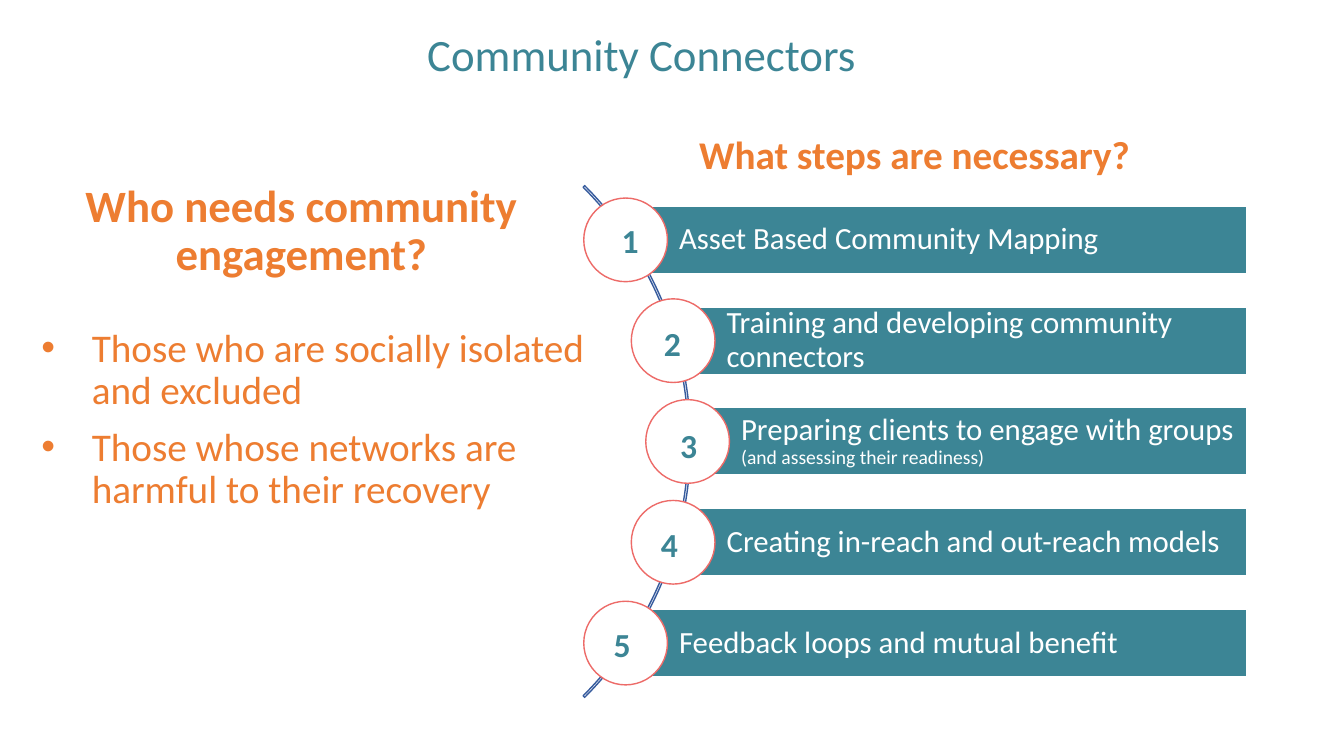
from dataclasses import dataclass
from math import sqrt

from lxml.etree import SubElement
from pptx import Presentation
from pptx.dml.color import RGBColor
from pptx.enum.shapes import MSO_SHAPE
from pptx.enum.text import MSO_ANCHOR, PP_ALIGN
from pptx.oxml.ns import qn
from pptx.util import Inches, Pt


@dataclass(frozen=True)
class Theme:
    """Colours, font and type sizes of the slide."""
    font: str = "Calibri"
    teal: str = "3C8595"
    orange: str = "ED7D31"
    coral: str = "ED6B68"
    blue: str = "365B9D"
    white: str = "FFFFFF"
    title: int = 32
    heading: int = 28
    number: int = 24
    step: int = 22
    note: int = 14


THEME = Theme()
ARC_X, ARC_Y, ARC_SIZE = 3.26, 4.38, 7.18
STEP_RADIUS, STEP_PITCH = 3.56, 1.0
BAR_RIGHT, BAR_HEIGHT, CIRCLE = 12.37, 0.67, 0.83
STEPS = [
    (["Asset Based Community Mapping"], 6.25, 2.13),
    (["Training and developing community connectors"], 6.67, 3.15),
    (["Preparing clients to engage with groups",
      "(and assessing their readiness)"], 6.83, 4.17),
    (["Creating in-reach and out-reach models"], 6.64, 5.15),
    (["Feedback loops and mutual benefit"], 6.17, 6.14),
]


def add_bullet(p, indent):
    """Give a paragraph a hanging bullet."""
    pPr = p._p.get_or_add_pPr()
    pPr.set("marL", str(Inches(indent)))
    pPr.set("indent", str(-Inches(indent)))
    SubElement(pPr, qn("a:buFont")).set("typeface", "Arial")
    SubElement(pPr, qn("a:buChar")).set("char", "•")


def write_text(sp, lines, *, sizes, color, bold=False, align=PP_ALIGN.CENTER,
               anchor=MSO_ANCHOR.TOP, insets=(0.1, 0.05, 0.1, 0.05),
               spacing=1.0, after=0, bullet=False):
    """Write one paragraph per line, each with its own size."""
    tf = sp.text_frame
    tf.word_wrap = True
    tf.vertical_anchor = anchor
    tf.margin_left, tf.margin_top, tf.margin_right, tf.margin_bottom = map(Inches, insets)
    for i, (line, size) in enumerate(zip(lines, sizes)):
        p = tf.add_paragraph() if i else tf.paragraphs[0]
        p.alignment = align
        p.line_spacing = spacing
        p.space_after = Pt(after)
        if bullet:
            add_bullet(p, 0.5)
        r = p.add_run()
        r.text = line
        r.font.name = THEME.font
        r.font.size = Pt(size)
        r.font.bold = bold
        r.font.color.rgb = RGBColor.from_string(color)


def add_text(s, box, lines, **style):
    """Add a text box."""
    write_text(s.shapes.add_textbox(*map(Inches, box)), lines, **style)


def add_shape(s, kind, box, fill=None, line=None):
    """Add a flat preset shape with an optional fill and outline."""
    sp = s.shapes.add_shape(kind, *map(Inches, box))
    sp.shadow.inherit = False
    if fill:
        sp.fill.solid()
        sp.fill.fore_color.rgb = RGBColor.from_string(fill)
    else:
        sp.fill.background()
    if line:
        sp.line.color.rgb = RGBColor.from_string(line)
        sp.line.width = Pt(1)
    else:
        sp.line.fill.background()
    return sp


def add_arc(s):
    """Add the thin arc that the steps follow."""
    half = ARC_SIZE / 2
    arc = add_shape(s, MSO_SHAPE.BLOCK_ARC,
                    (ARC_X - half, ARC_Y - half, ARC_SIZE, ARC_SIZE), line=THEME.blue)
    for i, value in enumerate((189, 27, 0.003)):
        arc.adjustments[i] = value


def add_step(s, index, lines, number_x, number_y):
    """Add a bar, its circle on the arc and its number."""
    offset = (index - len(STEPS) // 2) * STEP_PITCH
    x = ARC_X + sqrt(STEP_RADIUS ** 2 - offset ** 2)
    y = ARC_Y + offset
    bar = add_shape(s, MSO_SHAPE.RECTANGLE,
                    (x, y - BAR_HEIGHT / 2, BAR_RIGHT - x, BAR_HEIGHT),
                    THEME.teal, THEME.white)
    write_text(bar, lines, sizes=(THEME.step, THEME.note), color=THEME.white,
               align=PP_ALIGN.LEFT, anchor=MSO_ANCHOR.MIDDLE,
               insets=(0.53, 0.06, 0.06, 0.06), spacing=0.9)
    add_shape(s, MSO_SHAPE.OVAL, (x - CIRCLE / 2, y - CIRCLE / 2, CIRCLE, CIRCLE),
              THEME.white, THEME.coral)
    add_text(s, (number_x - 0.22, number_y, 0.44, 0.5), [str(index + 1)],
             sizes=[THEME.number], color=THEME.teal, bold=True)


def main():
    """Build and save the slide."""
    prs = Presentation()
    prs.slide_width, prs.slide_height = Inches(13.33), Inches(7.5)
    s = prs.slides.add_slide(prs.slide_layouts[6])
    add_text(s, (0.14, 1.08, 5.7, 1.75), ["Who needs community engagement?"],
             sizes=[THEME.title], color=THEME.orange, bold=True,
             anchor=MSO_ANCHOR.BOTTOM, spacing=0.9)
    add_text(s, (0.29, 2.2, 6.08, 3.94),
             ["Those who are socially isolated and excluded",
              "Those whose networks are harmful to their recovery"],
             sizes=[THEME.heading] * 2, color=THEME.orange, align=PP_ALIGN.LEFT,
             anchor=MSO_ANCHOR.MIDDLE, insets=(0.12,) * 4, spacing=0.9,
             after=10, bullet=True)
    add_arc(s)
    for index, step in enumerate(STEPS):
        add_step(s, index, *step)
    banner = add_shape(s, MSO_SHAPE.ROUNDED_RECTANGLE, (1.08, 0.18, 10.57, 0.7), THEME.white)
    write_text(banner, ["Community Connectors"], sizes=[THEME.title],
               color=THEME.teal, anchor=MSO_ANCHOR.MIDDLE)
    add_text(s, (5.84, 1.3, 6.46, 0.4), ["What steps are necessary?"],
             sizes=[THEME.heading], color=THEME.orange, bold=True, spacing=0.9)
    prs.save("out.pptx")


if __name__ == "__main__":
    main()
